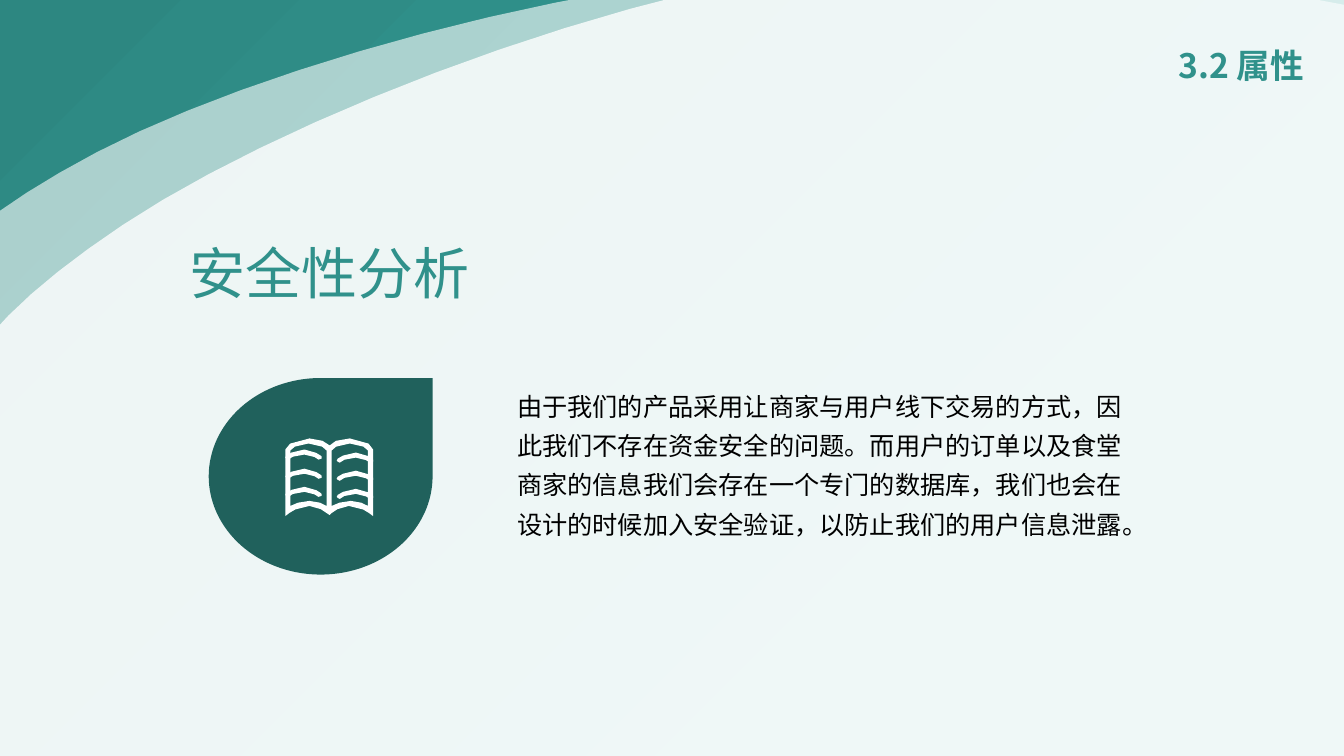
from copy import deepcopy

from lxml import etree
from pptx import Presentation
from pptx import util as u
from pptx.dml import color
from pptx.enum import shapes, text
from pptx.oxml import ns

PX = 9144
FONT = "Noto Sans CJK SC"
TEAL = "30918B"
WAVE_STEPS = 12
ICON_STEPS = 2
BODY = (
    "由于我们的产品采用让商家与用户线下交易的方式，因此我们不存在资金安全的问题。"
    "而用户的订单以及食堂商家的信息我们会存在一个专门的数据库，"
    "我们也会在设计的时候加入安全验证，以防止我们的用户信息泄露。"
)

OUTER_WAVE = [
    (-135, 389), (-102, 297, -61, 234, 96, 151), (252, 69, 564, -20, 813, -32),
    (1063, -44, 1436, -1, 1592, 82), (1749, 164, 1927, 416, 1818, 546),
    (1708, 677, 1133, 931, 813, 957), (493, 983, 52, 785, -104, 702),
    (-261, 620, -168, 481, -135, 389),
]
INNER_WAVE = [
    (-83, 483), (-60, 388, -25, 321, 122, 223), (269, 125, 570, 4, 817, -33),
    (1064, -70, 1439, -66, 1603, 0), (1767, 66, 1971, 298, 1875, 439),
    (1780, 580, 1234, 891, 918, 950), (602, 1009, 143, 857, -21, 792),
    (-185, 726, -107, 578, -83, 483),
]
BOOK_COVER = [
    (347, 435), (335, 435, 329, 439, 327, 442), (324, 439, 318, 435, 307, 435),
    (287, 435, 284, 445, 283, 446), (283, 512), (287, 509),
    (287, 509, 296, 502, 307, 502), (316, 503, 322, 507, 324, 509),
    (327, 511), (329, 509), (331, 507, 337, 503, 346, 502),
    (357, 502, 366, 509, 366, 509), (370, 512), (370, 446),
    (370, 445, 366, 435, 347, 435),
]
BOOK_PAGE = [
    (36, 62), (33, 60, 27, 57, 19, 57), (10, 57, 4, 60, 0, 62), (0, 7),
    (1, 6, 5, 0, 18, 0), (31, 0, 35, 6, 36, 7), (36, 62),
]
TEXT_LINE = [
    (35, 6), (35, 6, 29, 1, 19, 0), (9, 0, 1, 6, 1, 6), (0, 8), (1, 9), (3, 10),
    (3, 10, 10, 4, 19, 5), (27, 5, 33, 10, 33, 10), (36, 9), (36, 7), (35, 6),
]
PAGE_LINES = {283: (446, 465, 483), 334: (449, 467, 485)}


def rgb(value):
    return color.RGBColor.from_string(value)


def box(*lengths):
    return [u.Emu(n * PX) for n in lengths]


def paint(sp, fill, alpha=None):
    sp.shadow.inherit = False
    sp.fill.solid()
    sp.fill.fore_color.rgb = rgb(fill)
    sp.line.fill.background()
    if alpha:
        clr = sp._element.spPr.find(".//" + ns.qn("a:srgbClr"))
        etree.SubElement(clr, ns.qn("a:alpha"), val=str(alpha * 1000))


def outline(segments, steps, dx=0, dy=0):
    points = []
    for seg in segments:
        if len(seg) == 2:
            points.append(seg)
            continue
        (x0, y0), (x1, y1, x2, y2, x3, y3) = points[-1], seg
        for i in range(1, steps + 1):
            t = i / steps
            a, b, c, d = (1 - t) ** 3, 3 * t * (1 - t) ** 2, 3 * t * t * (1 - t), t ** 3
            points.append((a * x0 + b * x1 + c * x2 + d * x3,
                           a * y0 + b * y1 + c * y2 + d * y3))
    return [(round((x + dx) * PX), round((y + dy) * PX)) for x, y in points[:-1]]


def add_freeform(parent, contours, fill, alpha=None):
    first, *rest = contours
    builder = parent.build_freeform(*first[0])
    builder.add_line_segments(first[1:], close=True)
    for points in rest:
        builder.move_to(*points[0])
        builder.add_line_segments(points[1:], close=True)
    paint(builder.convert_to_shape(), fill, alpha)


def set_background(s, stops):
    fill = s.background.fill
    fill.gradient()
    fill.gradient_angle = 135
    stop_list = next(s._element.iter(ns.qn("a:gsLst")))
    while len(stop_list) < len(stops):
        stop_list.append(deepcopy(stop_list[0]))
    for stop, (position, value) in zip(fill.gradient_stops, stops):
        stop.position = position
        stop.color.rgb = rgb(value)


def write(sp, words, size, value, spacing, before, bold=False):
    tf = sp.text_frame
    tf.word_wrap = True
    tf.text = words
    p = tf.paragraphs[0]
    p.line_spacing = spacing
    p.space_before = u.Pt(before)
    r = p.runs[0]
    r.font.size = u.Pt(size)
    r.font.bold = bold
    r.font.name = FONT
    r.font.color.rgb = rgb(value)
    etree.SubElement(r.font._element, ns.qn("a:ea"), typeface=FONT)
    return tf


def add_title(s, words):
    sp = s.shapes.title
    sp.left, sp.top, sp.width, sp.height = box(723, 28, 580, 79)
    tf = write(sp, words, 24, TEAL, 0.9, 10, bold=True)
    tf.auto_size = text.MSO_AUTO_SIZE.NONE
    tf.vertical_anchor = text.MSO_ANCHOR.MIDDLE
    tf.paragraphs[0].alignment = text.PP_ALIGN.RIGHT
    s.shapes._spTree.append(sp._element)


def add_text(s, bounds, words, size, value):
    sp = s.shapes.add_textbox(*box(*bounds))
    tf = write(sp, words, size, value, 1.3, 6)
    tf.auto_size = text.MSO_AUTO_SIZE.SHAPE_TO_FIT_TEXT


def add_book(s):
    book = s.shapes.add_group_shape().shapes
    pages = [outline(BOOK_PAGE, ICON_STEPS, x, 440) for x in (288, 329)]
    add_freeform(book, [outline(BOOK_COVER, ICON_STEPS), *pages], "FFFFFF")
    for x, tops in PAGE_LINES.items():
        for y in tops:
            add_freeform(book, [outline(TEXT_LINE, ICON_STEPS, x, y)], "FFFFFF")


def main():
    prs = Presentation()
    prs.slide_width, prs.slide_height = box(1333, 750)
    s = prs.slides.add_slide(prs.slide_layouts[5])
    set_background(s, [(0, "39ACA5"), (0.23, "39ACA5"), (0.69, TEAL), (0.97, "2D8781")])
    for wave, alpha in ((OUTER_WAVE, 60), (INNER_WAVE, 80)):
        add_freeform(s.shapes, [outline(wave, WAVE_STEPS)], "FFFFFF", alpha)
    drop = s.shapes.add_shape(shapes.MSO_SHAPE.TEAR, *box(207, 375, 222, 195))
    paint(drop, "20615C")
    add_book(s)
    add_title(s, "3.2 属性")
    add_text(s, (178, 212, 460, 89), "安全性分析", 40, TEAL)
    add_text(s, (503, 374, 632, 164), BODY, 18, "000000")
    prs.save("out.pptx")


if __name__ == "__main__":
    main()
